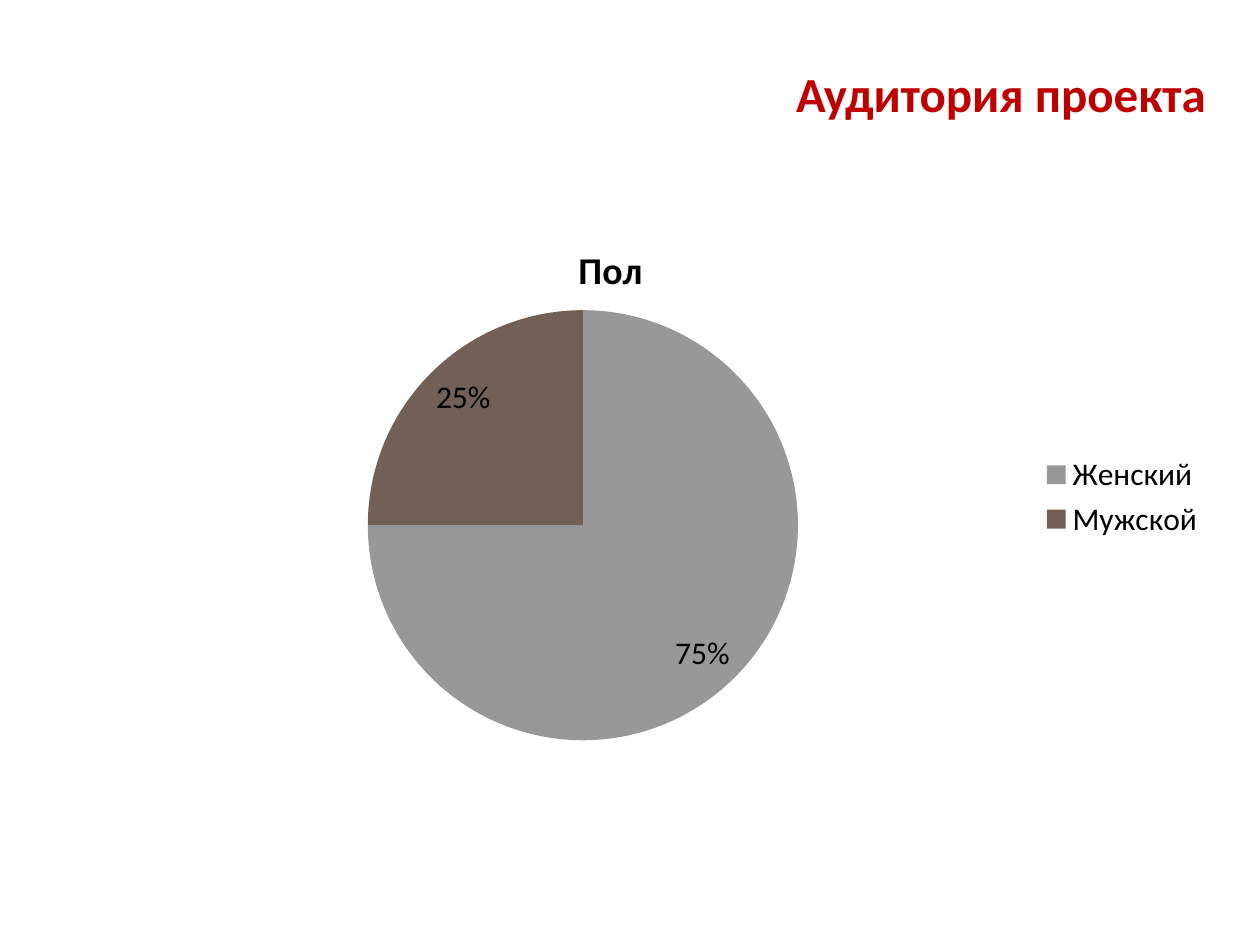
import pptx
import pptx.chart.data
import pptx.dml.color
import pptx.enum.chart
import pptx.enum.text
import pptx.oxml
import pptx.util

RGBColor = pptx.dml.color.RGBColor
RED = RGBColor(0xC0, 0x00, 0x00)
BLACK = RGBColor(0x00, 0x00, 0x00)
GRAY = RGBColor(0x98, 0x98, 0x98)
BROWN = RGBColor(0x72, 0x60, 0x56)
FACE = "Calibri"
SCALE = 914400 // 126


def px(*sizes):
    """Turn pixel lengths into EMU."""
    return [size * SCALE for size in sizes]


def style(font, size, color, bold=False):
    """Set face, size, colour and weight of a font."""
    font.name = FACE
    font.size = pptx.util.Pt(size)
    font.color.rgb = color
    font.bold = bold


def layout(target=None, **parts):
    """Make a manual chart layout from fractions of the chart box."""
    inner = '<c:layoutTarget val="inner"/>' if target else ""
    modes = "".join(f'<c:{key}Mode val="edge"/>' for key in "xy")
    sizes = "".join(f'<c:{key} val="{val}"/>' for key, val in parts.items())
    space = "http://schemas.openxmlformats.org/drawingml/2006/chart"
    return pptx.oxml.parse_xml(
        f'<c:layout xmlns:c="{space}"><c:manualLayout>'
        f"{inner}{modes}{sizes}</c:manualLayout></c:layout>"
    )


def place(node, frame, after=None):
    """Put a layout into a chart part in place of any old one."""
    for old in node.xpath("c:layout"):
        node.remove(old)
    if after is None:
        node.insert(0, frame)
    else:
        after.addnext(frame)


def heading(slide, left, top, width, height):
    """Write the slide heading in the given box."""
    box = slide.shapes.add_textbox(*px(left, top, width, height))
    frame = box.text_frame
    frame.word_wrap = True
    frame.vertical_anchor = pptx.enum.text.MSO_ANCHOR.MIDDLE
    line = frame.paragraphs[0]
    line.text = "Аудитория проекта"
    line.alignment = pptx.enum.text.PP_ALIGN.RIGHT
    line.line_spacing = 0.8
    style(line.font, 28, RED, True)


def pie(slide, left, top, width, height):
    """Draw the pie of audience by sex in the given box."""
    data = pptx.chart.data.CategoryChartData(number_format="0%")
    data.categories = ["Женский", "Мужской"]
    data.add_series("Пол", (0.75, 0.25))
    kind = pptx.enum.chart.XL_CHART_TYPE.PIE
    chart = slide.shapes.add_chart(kind, *px(left, top, width, height), data).chart
    style(chart.font, 18, BLACK)

    chart.has_title = True
    title = chart.chart_title
    line = title.text_frame.paragraphs[0]
    line.text = "Пол"
    style(line.font, 21.6, BLACK, True)
    text = title._element.xpath("c:tx")[0]
    place(title._element, layout(x=0.43, y=0.04), text)

    chart.has_legend = True
    chart.legend.position = pptx.enum.chart.XL_LEGEND_POSITION.RIGHT
    chart.legend.include_in_layout = False

    plot = chart.plots[0]
    plot.vary_by_categories = True
    for index, color in enumerate((GRAY, BROWN)):
        fill = plot.series[0].points[index].format.fill
        fill.solid()
        fill.fore_color.rgb = color
    plot.has_data_labels = True
    labels = plot.data_labels
    labels.show_value = True
    labels.show_percentage = False
    labels.number_format = "0%"
    labels.number_format_is_linked = False
    labels.position = pptx.enum.chart.XL_LABEL_POSITION.INSIDE_END
    style(labels.font, 18, BLACK)
    area = chart._chartSpace.xpath("c:chart/c:plotArea")[0]
    place(area, layout("inner", x=0.07, y=0.17, w=0.74, h=0.76))


def main():
    """Build the slide and save it."""
    deck = pptx.Presentation()
    deck.slide_width, deck.slide_height = px(1260, 945)
    slide = deck.slides.add_slide(deck.slide_layouts[6])
    heading(slide, 512, 45, 706, 107)
    pie(slide, 84, 214, 1134, 566)
    deck.save("out.pptx")


if __name__ == "__main__":
    main()
